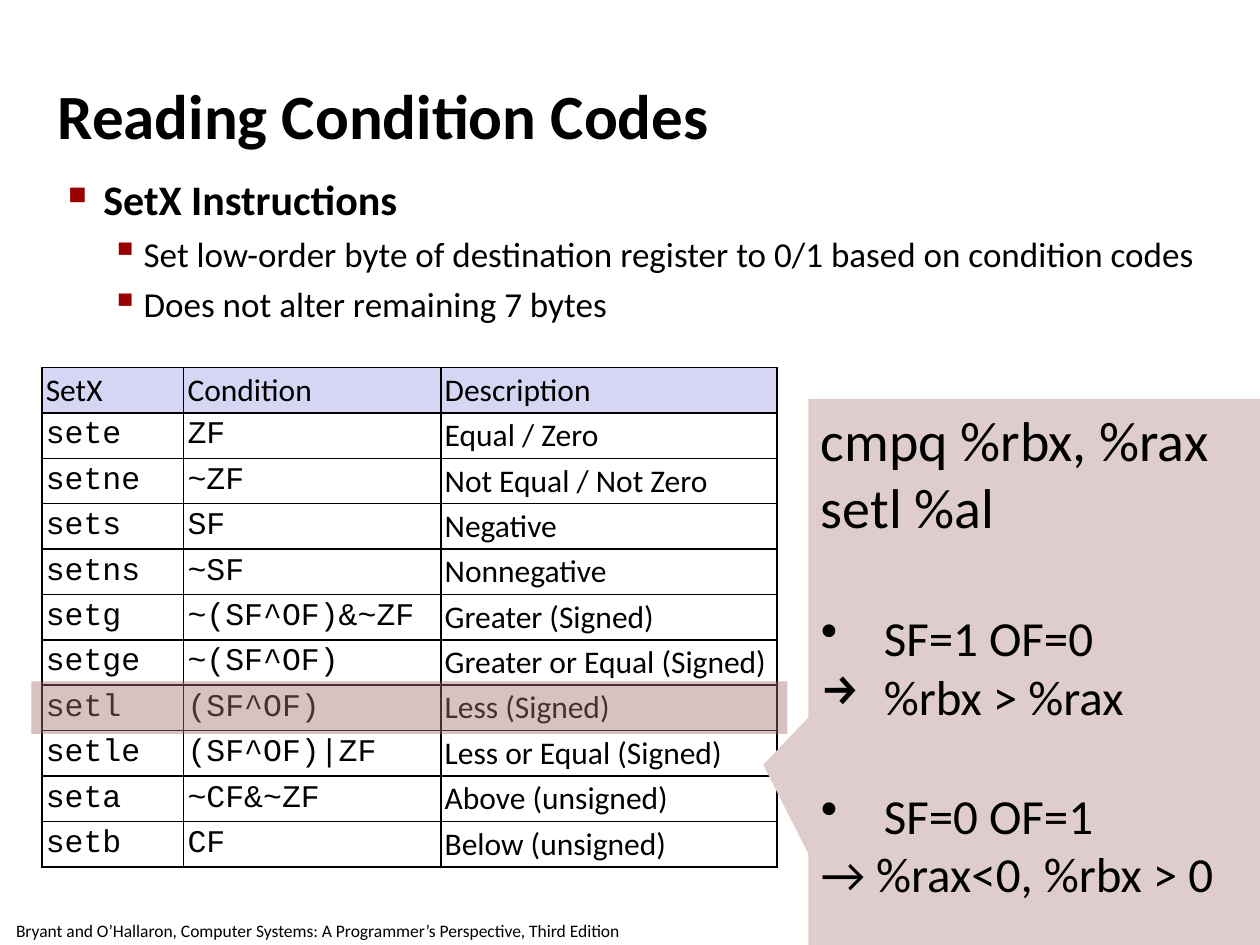
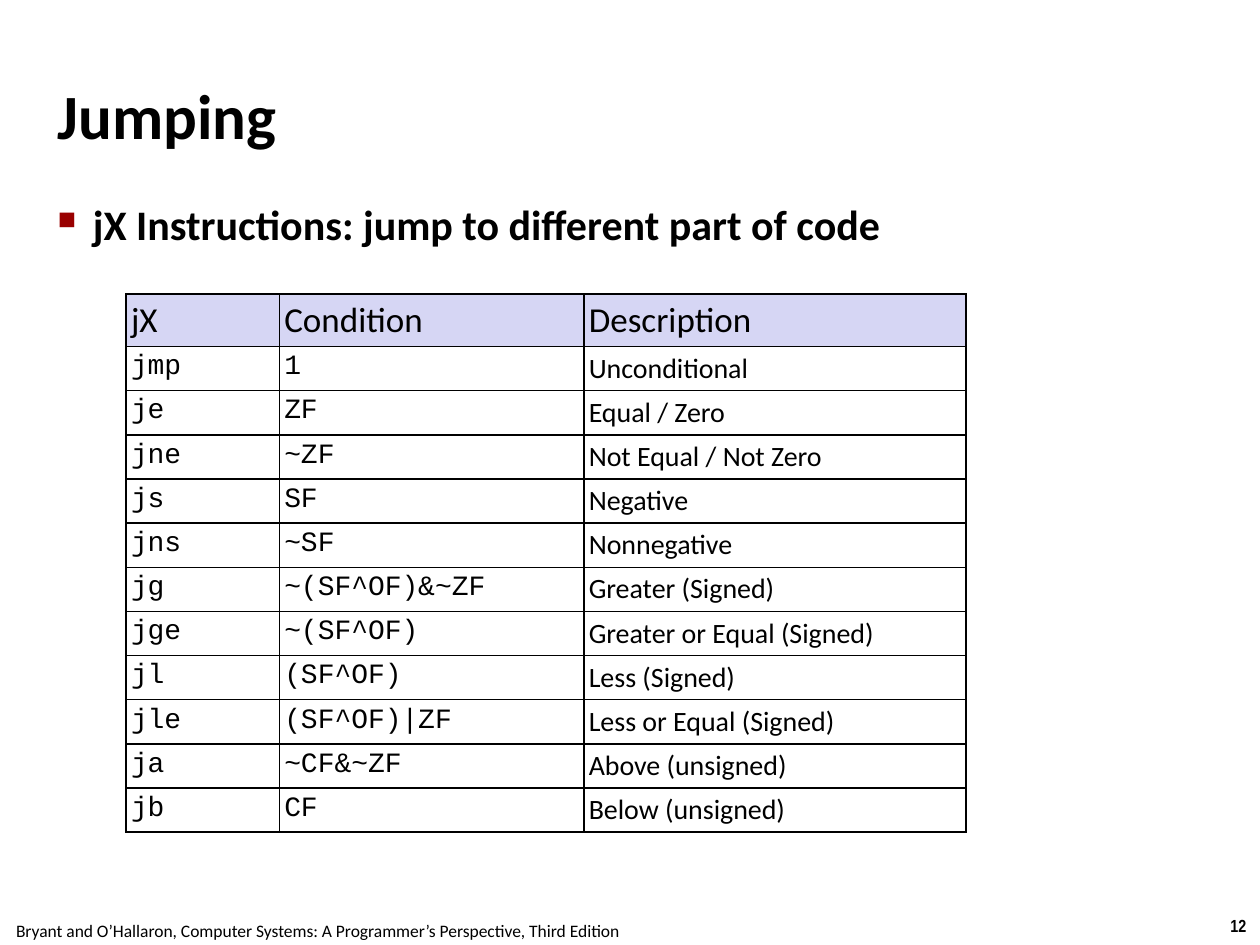
import dataclasses

import lxml.etree
import pptx
import pptx.dml.color
import pptx.enum.shapes
import pptx.enum.text
import pptx.oxml.ns
import pptx.util

RGBColor = pptx.dml.color.RGBColor
BLACK = RGBColor(0x00, 0x00, 0x00)
BULLET_RED = RGBColor(0x99, 0x00, 0x00)
HEADER_LILAC = RGBColor(0xD6, 0xD6, 0xF4)
HIGHLIGHT_RED = RGBColor(0xA6, 0x71, 0x71)
CALLOUT_PINK = RGBColor(0xDF, 0xCC, 0xCC)

TEXT_FONT, CODE_FONT, NUMBER_FONT = "Calibri", "Courier New", "Arial Narrow"
MIDDLE = pptx.enum.text.MSO_ANCHOR.MIDDLE
TOP = pptx.enum.text.MSO_ANCHOR.TOP
SHAPES = pptx.enum.shapes.MSO_SHAPE

SLIDE_WIDTH, SLIDE_HEIGHT = pptx.util.Inches(10), pptx.util.Inches(7.5)
GRID_COLUMNS, GRID_ROWS = 120, 90
CREDIT = ("Bryant and O’Hallaron, Computer Systems: "
          "A Programmer’s Perspective, Third Edition")

# Instruction suffix, condition, description
CONDITIONS = [
    ("e", "ZF", "Equal / Zero"),
    ("ne", "~ZF", "Not Equal / Not Zero"),
    ("s", "SF", "Negative"),
    ("ns", "~SF", "Nonnegative"),
    ("g", "~(SF^OF)&~ZF", "Greater (Signed)"),
    ("ge", "~(SF^OF)", "Greater or Equal (Signed)"),
    ("l", "(SF^OF)", "Less (Signed)"),
    ("le", "(SF^OF)|ZF", "Less or Equal (Signed)"),
    ("a", "~CF&~ZF", "Above (unsigned)"),
    ("b", "CF", "Below (unsigned)"),
]


def across(columns):
    return round(SLIDE_WIDTH * columns / GRID_COLUMNS)


def down(rows):
    return round(SLIDE_HEIGHT * rows / GRID_ROWS)


@dataclasses.dataclass
class Box:
    """A region of the slide, in grid columns and rows."""
    left: float
    top: float
    width: float
    height: float

    def place(self):
        return (across(self.left), down(self.top),
                across(self.width), down(self.height))


@dataclasses.dataclass
class Style:
    size: float
    bold: bool = False
    before: float = 0
    margin: float = 0
    hanging: float = 0
    bullet: str = ""
    bullet_percent: int = 100
    bullet_color: RGBColor = BLACK
    level: int = 0
    font: str = TEXT_FONT


TITLE = Style(36, bold=True, margin=0.13, hanging=0.13)
TOPIC = Style(24, bold=True, before=6, margin=0.28, hanging=0.28,
              bullet="■", bullet_percent=60, bullet_color=BULLET_RED)
DETAIL = Style(20, before=5, margin=0.6, hanging=0.26, level=1,
               bullet="▪", bullet_percent=110, bullet_color=BULLET_RED)
CODE_LINE = Style(32)
FLAGS = Style(28, margin=0.5, hanging=0.5, bullet="•")
FLAGS_AFTER_CODE = dataclasses.replace(FLAGS, before=39)
FLAGS_AFTER_FLAGS = dataclasses.replace(FLAGS, before=34)
RESULT = dataclasses.replace(FLAGS, bullet="→")
RESULT_INLINE = Style(28)


def add_xml(parent, tag, **attributes):
    return lxml.etree.SubElement(parent, pptx.oxml.ns.qn(tag), attributes)


def style_paragraph(para, text, style):
    para.text = text
    para.level = style.level
    properties = para._p.get_or_add_pPr()
    properties.set("marL", str(pptx.util.Inches(style.margin)))
    properties.set("indent", str(-pptx.util.Inches(style.hanging)))
    para.space_before = pptx.util.Pt(style.before)
    if style.bullet:
        color = add_xml(properties, "a:buClr")
        add_xml(color, "a:srgbClr", val=str(style.bullet_color))
        add_xml(properties, "a:buSzPct", val=str(style.bullet_percent * 1000))
        add_xml(properties, "a:buChar", char=style.bullet)
    para.font.name = style.font
    para.font.size = pptx.util.Pt(style.size)
    para.font.bold = style.bold
    para.font.color.rgb = BLACK


def fill_text(frame, lines, anchor=TOP):
    frame.word_wrap = True
    frame.vertical_anchor = anchor
    for index, (text, style) in enumerate(lines):
        para = frame.add_paragraph() if index else frame.paragraphs[0]
        style_paragraph(para, text, style)
        para.alignment = pptx.enum.text.PP_ALIGN.LEFT


def set_margins(holder, inches):
    for side in ("left", "top", "right", "bottom"):
        setattr(holder, f"margin_{side}", pptx.util.Inches(inches))


def add_text(page, box, lines, anchor=TOP):
    frame = page.shapes.add_textbox(*box.place()).text_frame
    set_margins(frame, 0.04)
    fill_text(frame, lines, anchor)


def add_footer(page, box, text, style):
    frame = page.shapes.add_textbox(*box.place()).text_frame
    frame.word_wrap = False
    style_paragraph(frame.paragraphs[0], text, style)
    frame.paragraphs[0].alignment = pptx.enum.text.PP_ALIGN.CENTER


def add_page(deck, title, number=None):
    """Add a blank page with the shared title and footers."""
    page = deck.slides.add_slide(deck.slide_layouts[6])
    if number:
        add_footer(page, Box(115.9, 86.6, 4.1, 3.2), number,
                   Style(10, bold=True, font=NUMBER_FONT))
    add_footer(page, Box(0, 87, 60.5, 3.2), CREDIT, Style(10))
    add_text(page, Box(5, 3.4, 110, 15), [(title, TITLE)], MIDDLE)
    return page


def draw_borders(cell):
    properties = cell._tc.get_or_add_tcPr()
    for side in ("L", "R", "T", "B"):
        line = add_xml(properties, f"a:ln{side}", w=str(pptx.util.Pt(1)))
        color = add_xml(add_xml(line, "a:solidFill"), "a:srgbClr")
        color.set("val", str(BLACK))


def add_condition_table(page, box, rows, column_widths, header_height,
                        header_size, body_size, margin, anchor):
    """Fill the box with a header row and equally high instruction rows."""
    frame = page.shapes.add_table(len(rows), len(column_widths), *box.place())
    table = frame.table
    table.first_row = table.horz_banding = False
    for column, width in zip(table.columns, column_widths):
        column.width = across(width)
    row_height = (box.height - header_height) / (len(rows) - 1)
    for row_index, texts in enumerate(rows):
        is_header = row_index == 0
        table.rows[row_index].height = down(
            header_height if is_header else row_height)
        for column_index, text in enumerate(texts):
            cell = table.cell(row_index, column_index)
            draw_borders(cell)
            if is_header:
                cell.fill.solid()
                cell.fill.fore_color.rgb = HEADER_LILAC
            else:
                cell.fill.background()
            set_margins(cell, margin)
            cell.vertical_anchor = anchor
            is_code = not is_header and column_index < 2
            style = Style(header_size if is_header else body_size,
                          font=CODE_FONT if is_code else TEXT_FONT)
            style_paragraph(cell.text_frame.paragraphs[0], text, style)


def add_filled_shape(page, kind, box, color):
    shape = page.shapes.add_shape(kind, *box.place())
    shape.shadow.inherit = False
    shape.fill.solid()
    shape.fill.fore_color.rgb = color
    shape.line.fill.background()
    return shape


def add_row_highlight(page, table_box, row_index, row_height):
    """Lay a translucent band over one row of the table."""
    overhang, height = 1, 5
    middle = table_box.top + (row_index + 0.5) * row_height
    band = Box(table_box.left - overhang, middle - height / 2,
               table_box.width + 2 * overhang, height)
    shape = add_filled_shape(page, SHAPES.RECTANGLE, band, HIGHLIGHT_RED)
    color = shape.fill._xPr.find(".//" + pptx.oxml.ns.qn("a:srgbClr"))
    add_xml(color, "a:alpha", val="43000")


def add_example_callout(page, box):
    callout = add_filled_shape(page, SHAPES.RECTANGULAR_CALLOUT, box,
                               CALLOUT_PINK)
    callout.adjustments[0] = -0.6
    callout.adjustments[1] = 0.17
    fill_text(callout.text_frame, [
        ("cmpq %rbx, %rax", CODE_LINE),
        ("setl %al", CODE_LINE),
        ("SF=1 OF=0", FLAGS_AFTER_CODE),
        ("%rbx > %rax", RESULT),
        ("SF=0 OF=1", FLAGS_AFTER_FLAGS),
        ("→ %rax<0, %rbx > 0", RESULT_INLINE),
    ])


def instruction_rows(prefix):
    return [(prefix + suffix, condition, description)
            for suffix, condition, description in CONDITIONS]


def build_reading_page(deck):
    page = add_page(deck, "Reading Condition Codes")
    add_text(page, Box(6, 16, 110, 16), [
        ("SetX Instructions", TOPIC),
        ("Set low-order byte of destination register to 0/1 "
         "based on condition codes", DETAIL),
        ("Does not alter remaining 7 bytes", DETAIL),
    ])
    rows = [("SetX", "Condition", "Description"), *instruction_rows("set")]
    row_height = 4.32
    table_box = Box(4, 35, 70, row_height * len(rows))
    add_condition_table(page, table_box, rows, (13.5, 24.5, 32), row_height,
                        header_size=18, body_size=18, margin=0.03,
                        anchor=MIDDLE)
    highlighted = [row[0] for row in rows].index("setl")
    add_row_highlight(page, table_box, highlighted, row_height)
    add_example_callout(page, Box(77, 38, 43, 52))


def build_jumping_page(deck):
    page = add_page(deck, "Jumping", "12")
    add_text(page, Box(5, 18.4, 110, 7.7),
             [("jX Instructions: jump to different part of code", TOPIC)])
    rows = [("jX", "Condition", "Description"),
            ("jmp", "1", "Unconditional"), *instruction_rows("j")]
    add_condition_table(page, Box(12, 28, 80, 51.3), rows, (14.6, 29, 36.4),
                        header_height=5, header_size=20, body_size=16,
                        margin=0.04, anchor=TOP)


def main():
    deck = pptx.Presentation()
    deck.slide_width, deck.slide_height = SLIDE_WIDTH, SLIDE_HEIGHT
    build_reading_page(deck)
    build_jumping_page(deck)
    deck.save("out.pptx")


if __name__ == "__main__":
    main()
